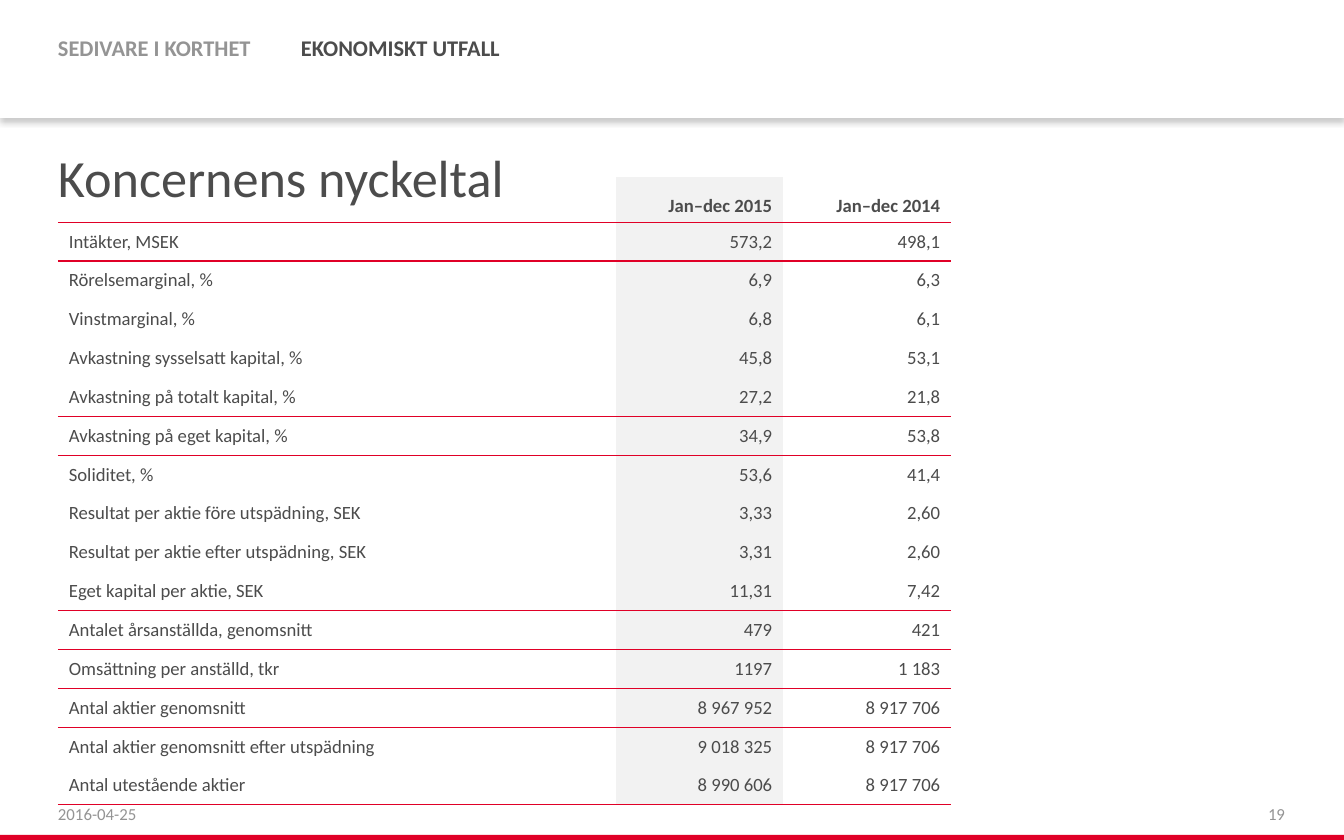
"""Build the slide with the group's key figures for 2015 and 2014."""
from lxml import etree
from pptx import Presentation
from pptx.dml.color import RGBColor
from pptx.enum.shapes import MSO_SHAPE
from pptx.enum.text import MSO_ANCHOR, PP_ALIGN
from pptx.oxml import parse_xml
from pptx.oxml.ns import nsdecls, qn
from pptx.util import Pt

RECTANGLE = MSO_SHAPE.RECTANGLE
TOP, MIDDLE, BOTTOM = MSO_ANCHOR.TOP, MSO_ANCHOR.MIDDLE, MSO_ANCHOR.BOTTOM
LEFT, RIGHT = PP_ALIGN.LEFT, PP_ALIGN.RIGHT

EMU_PER_PX = 914400 / 134.4
FONT = "Calibri"
WHITE = RGBColor(0xFF, 0xFF, 0xFF)
RED = RGBColor(0xE0, 0x00, 0x27)
DARK = RGBColor(0x4C, 0x4C, 0x4C)
GREY = RGBColor(0x94, 0x94, 0x94)
PALE = RGBColor(0xF2, 0xF2, 0xF2)
PLAIN_TABLE_STYLE = "{2D5ABB26-0587-4C30-8999-92F81FD0307C}"

HEADER = ("", "Jan–dec 2015", "Jan–dec 2014")
KEY_FIGURES = [
    ("Intäkter, MSEK", "573,2", "498,1"),
    ("Rörelsemarginal, %", "6,9", "6,3"),
    ("Vinstmarginal, %", "6,8", "6,1"),
    ("Avkastning sysselsatt kapital, %", "45,8", "53,1"),
    ("Avkastning på totalt kapital, %", "27,2", "21,8"),
    ("Avkastning på eget kapital, %", "34,9", "53,8"),
    ("Soliditet, %", "53,6", "41,4"),
    ("Resultat per aktie före utspädning, SEK", "3,33", "2,60"),
    ("Resultat per aktie efter utspädning, SEK", "3,31", "2,60"),
    ("Eget kapital per aktie, SEK", "11,31", "7,42"),
    ("Antalet årsanställda, genomsnitt", "479", "421"),
    ("Omsättning per anställd, tkr", "1197", "1 183"),
    ("Antal aktier genomsnitt", "8 967 952", "8 917 706"),
    ("Antal aktier genomsnitt efter utspädning", "9 018 325", "8 917 706"),
    ("Antal utestående aktier", "8 990 606", "8 917 706"),
]
RULES_BELOW = {0: 1, 5: 0.5, 10: 0.5, 12: 0.5, 15: 0.5}
COLUMN_WIDTHS = (558, 167, 168)
TABLE_HEIGHT = 622


def px(length):
    return round(length * EMU_PER_PX)


def write(frame, text, size, color, bold=False, align=LEFT):
    paragraph = frame.paragraphs[0]
    paragraph.alignment = align
    run = paragraph.add_run()
    run.text = text
    run.font.name = FONT
    run.font.size = Pt(size)
    run.font.bold = bold
    run.font.color.rgb = color


presentation = Presentation()
presentation.slide_width = px(1344)
presentation.slide_height = px(840)
slide = presentation.slides.add_slide(presentation.slide_layouts[6])

bars = []
for top, height, color in ((0, 118, WHITE), (835, 5, RED)):
    bar = slide.shapes.add_shape(RECTANGLE, 0, px(top), px(1344), px(height))
    bar.shadow.inherit = False
    bar.fill.solid()
    bar.fill.fore_color.rgb = color
    bar.line.fill.background()
    bars.append(bar)

effects = bars[0].element.spPr.find(qn("a:effectLst"))
effects.append(parse_xml(
    f'<a:outerShdw {nsdecls("a")} blurRad="{Pt(3)}" dist="{Pt(2)}" dir="5400000" '
    'algn="t" rotWithShape="0"><a:srgbClr val="000000"><a:alpha val="20000"/>'
    '</a:srgbClr></a:outerShdw>'))

for left, width, text, color in (
    (47, 220, "SEDIVARE I KORTHET", GREY),
    (290, 223, "EKONOMISKT UTFALL", DARK),
):
    label = slide.shapes.add_shape(RECTANGLE, px(left), px(24), px(width), px(47))
    label.shadow.inherit = False
    label.fill.solid()
    label.fill.fore_color.rgb = WHITE
    label.line.fill.background()
    frame = label.text_frame
    frame.word_wrap = False
    frame.margin_left = frame.margin_right = px(11)
    frame.margin_top = frame.margin_bottom = px(10)
    write(frame, text, 12, color, bold=True)

for left, top, width, height, inset_top, inset_bottom, anchor, text, size, color, align in (
    (58, 118, 1228, 108, 27, 16, TOP, "Koncernens nyckeltal", 28, DARK, LEFT),
    (58, 792, 313, 42, 11, 11, BOTTOM, "2016-04-25", 9, GREY, LEFT),
    (972, 792, 313, 42, 11, 11, BOTTOM, "19", 9, GREY, RIGHT),
):
    box = slide.shapes.add_textbox(px(left), px(top), px(width), px(height))
    frame = box.text_frame
    frame.word_wrap = True
    frame.vertical_anchor = anchor
    frame.margin_left = frame.margin_right = 0
    frame.margin_top, frame.margin_bottom = px(inset_top), px(inset_bottom)
    write(frame, text, size, color, align=align)

rows = [HEADER] + KEY_FIGURES
table = slide.shapes.add_table(
    len(rows), len(HEADER), px(58), px(177), px(sum(COLUMN_WIDTHS)), px(TABLE_HEIGHT)
).table
table.horz_banding = False
table._tbl.tblPr.find(qn("a:tableStyleId")).text = PLAIN_TABLE_STYLE
for column, width in zip(table.columns, COLUMN_WIDTHS):
    column.width = px(width)

for row_index, values in enumerate(rows):
    is_header = row_index == 0
    table.rows[row_index].height = px(TABLE_HEIGHT / len(rows))
    for column_index, value in enumerate(values):
        cell = table.cell(row_index, column_index)
        cell.margin_left = cell.margin_right = px(11)
        cell.margin_top = 0
        cell.margin_bottom = px(5 if is_header else 0)
        cell.vertical_anchor = BOTTOM if is_header else MIDDLE
        properties = cell._tc.get_or_add_tcPr()
        for side, rule_row in (("a:lnT", row_index - 1), ("a:lnB", row_index)):
            if rule_row in RULES_BELOW:
                border = etree.SubElement(properties, qn(side), w=str(Pt(RULES_BELOW[rule_row])))
                fill = etree.SubElement(border, qn("a:solidFill"))
                etree.SubElement(fill, qn("a:srgbClr"), val=str(RED))
        if column_index == 1:
            cell.fill.solid()
            cell.fill.fore_color.rgb = PALE
        else:
            cell.fill.background()
        if value:
            align = RIGHT if column_index else LEFT
            write(cell.text_frame, value, 10, DARK, bold=is_header, align=align)

presentation.save("out.pptx")
